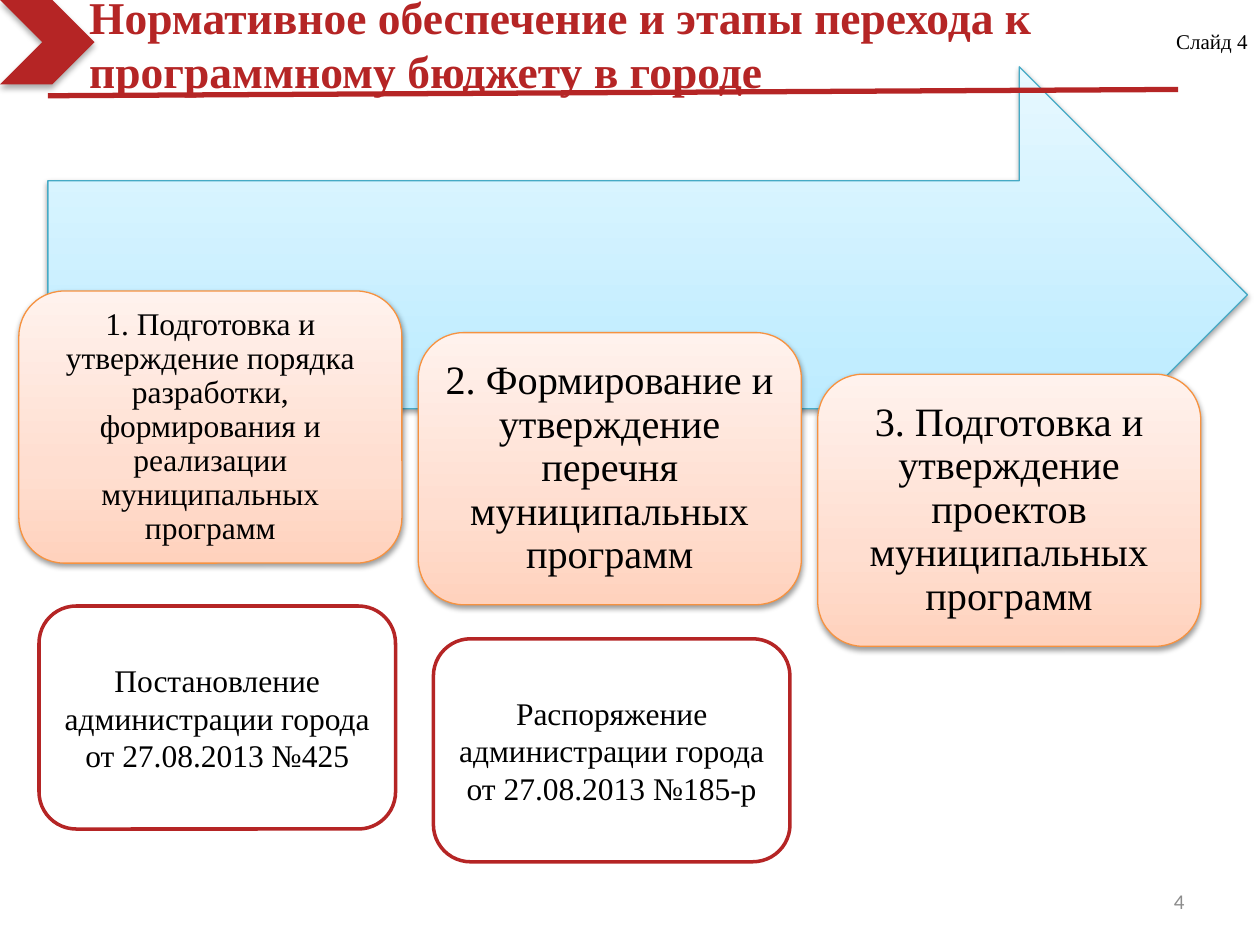
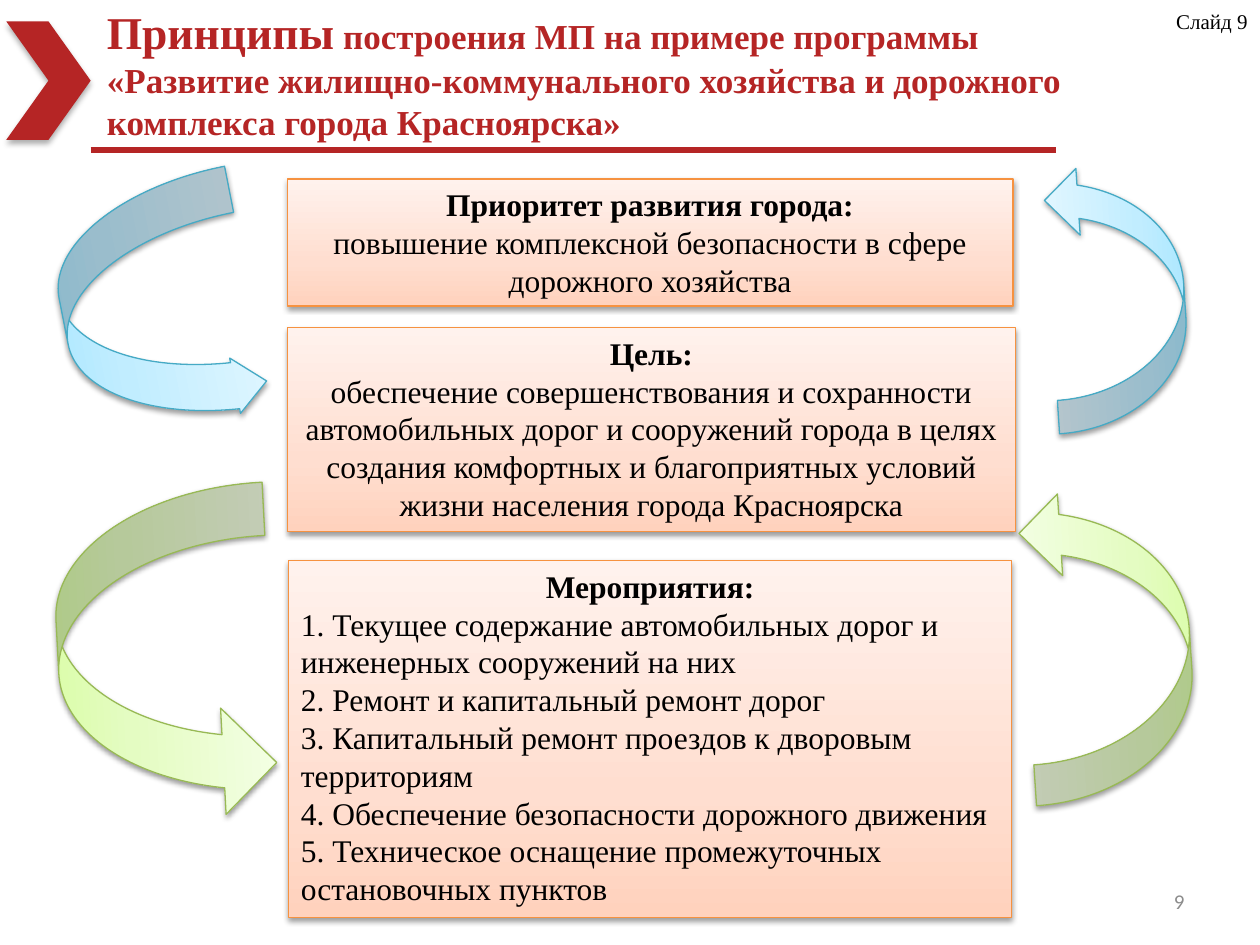
from copy import deepcopy

from pptx import Presentation
from pptx.dml.color import RGBColor
from pptx.enum.shapes import MSO_CONNECTOR as CONN, MSO_SHAPE as SHAPE
from pptx.enum.text import MSO_ANCHOR as ANCHOR, PP_ALIGN as ALIGN
from pptx.oxml.ns import qn
from pptx.util import Inches, Pt
from lxml.etree import SubElement

# Shared style
FONT = "Times New Roman"
RED, BLACK, GREY, WHITE = "B52525", "000000", "8C8C8C", "FFFFFF"
STOPS = (0, 0.35, 1)
BLUE = (("A7E6FF", "C1EDFF", "E7F8FF"), "46AAC5")
GREEN = (("DAFDA7", "E4FCC2", "F5FFE7"), "98B955")
PEACH = (("FFD2BD", "FFDED0", "FFF2ED"), "F69240")
SOFT_SHADOW = (3.15, 1.57, 38)
DEEP_SHADOW = (3.5, 2.2, 32)


def rgb(code):
    return RGBColor.from_string(code)


def inches(box):
    return [Inches(v) for v in box]


def add_shadow(sp, blur, dist, alpha):
    """Put a soft black shadow below the shape."""
    sp.shadow.inherit = False
    effects = sp._element.spPr.find(qn("a:effectLst"))
    shadow = SubElement(effects, qn("a:outerShdw"), blurRad=str(Pt(blur)),
                        dist=str(Pt(dist)), dir="5400000", rotWithShape="0")
    color = SubElement(shadow, qn("a:srgbClr"), val=BLACK)
    SubElement(color, qn("a:alpha"), val=str(alpha * 1000))


def add_gradient_shape(slide, kind, box, theme, rotation=0):
    """Add a shape with a three-stop gradient rising from its bottom edge."""
    colors, line = theme
    sp = slide.shapes.add_shape(kind, *inches(box))
    sp.rotation = rotation
    sp.fill.gradient()
    sp.fill.gradient_angle = 90
    stop_list = next(sp._element.spPr.iter(qn("a:gsLst")))
    stop_list.append(deepcopy(stop_list[0]))
    for stop, position, color in zip(sp.fill.gradient_stops, STOPS, colors):
        stop.position = position
        stop.color.rgb = rgb(color)
    sp.line.color.rgb = rgb(line)
    sp.line.width = Pt(0.75)
    add_shadow(sp, *SOFT_SHADOW)
    return sp


def style(p, size, color=BLACK, bold=False, align=ALIGN.LEFT, font=FONT):
    p.alignment = align
    p.font.name, p.font.size, p.font.bold = font, Pt(size), bold
    p.font.color.rgb = rgb(color)


def set_text(sp, text, size, anchor=ANCHOR.MIDDLE, **look):
    """Fill a shape with one styled paragraph."""
    tf = sp.text_frame
    tf.word_wrap = True
    tf.vertical_anchor = anchor
    p = tf.paragraphs[0]
    p.text = text
    style(p, size, **look)
    return tf


def add_label(slide, box, text, size, **look):
    return set_text(slide.shapes.add_textbox(*inches(box)), text, size, **look)


# Header and footer used by both slides
def add_header(slide, title, title_box, chevron_box, rule, label_top, number):
    tf = add_label(slide, title_box, title, 26, color=RED, bold=True)
    line = slide.shapes.add_connector(CONN.STRAIGHT, *inches(rule))
    line.line.color.rgb = rgb(RED)
    line.line.width = Pt(3)
    SubElement(line._element.spPr, qn("a:effectLst"))
    chevron = slide.shapes.add_shape(SHAPE.CHEVRON, *inches(chevron_box))
    chevron.fill.solid()
    chevron.fill.fore_color.rgb = rgb(RED)
    chevron.line.fill.background()
    add_shadow(chevron, *DEEP_SHADOW)
    add_label(slide, (9.02, label_top, 0.98, 0.3), f"Слайд {number}", 12,
              anchor=ANCHOR.TOP, align=ALIGN.RIGHT)
    return tf


def add_page_number(slide, number):
    add_label(slide, (7.17, 6.95, 2.33, 0.4), str(number), 12,
              color=GREY, align=ALIGN.RIGHT, font="Calibri")


# Slide 4: stages of the transition
def add_stages(slide, left, top):
    stages = (
        ("1. Подготовка и утверждение порядка разработки, формирования "
         "и реализации муниципальных программ", 18),
        ("2. Формирование и утверждение перечня муниципальных программ", 23),
        ("3. Подготовка и утверждение проектов муниципальных программ", 23),
    )
    for i, (text, size) in enumerate(stages):
        box = (left + 3.17 * i, top + 0.33 * i, 3.04, 2.16)
        sp = add_gradient_shape(slide, SHAPE.ROUNDED_RECTANGLE, box, PEACH)
        tf = set_text(sp, text, size, align=ALIGN.CENTER)
        tf.paragraphs[0].line_spacing = 0.9


def add_order(slide, left, top, text):
    sp = slide.shapes.add_shape(SHAPE.ROUNDED_RECTANGLE,
                                *inches((left, top, 2.83, 1.77)))
    sp.shadow.inherit = False
    sp.fill.solid()
    sp.fill.fore_color.rgb = rgb(WHITE)
    sp.line.color.rgb = rgb(RED)
    sp.line.width = Pt(2)
    set_text(sp, text, 18, align=ALIGN.CENTER)


def build_stages_slide(slide):
    add_gradient_shape(slide, SHAPE.RIGHT_ARROW, (0.38, 0.53, 9.52, 3.62), BLUE)
    add_stages(slide, 0.15, 2.31)
    add_page_number(slide, 4)
    add_order(slide, 0.31, 4.81,
              "Постановление администрации города от 27.08.2013 №425")
    add_order(slide, 3.44, 5.07,
              "Распоряжение администрации города от 27.08.2013 №185-р")
    add_header(slide,
               "Нормативное обеспечение и этапы перехода к программному "
               "бюджету в городе",
               title_box=(0.61, 0.02, 9, 0.65), chevron_box=(0, 0, 0.75, 0.67),
               rule=(0.38, 0.76, 9.35, 0.71), label_top=0.18, number=4)


# Slide 9: principles of a municipal programme
def add_principle(slide, box, heading, lines, align):
    sp = add_gradient_shape(slide, SHAPE.RECTANGLE, box, PEACH)
    tf = set_text(sp, heading, 18, anchor=ANCHOR.TOP, bold=True,
                  align=ALIGN.CENTER)
    for text in lines:
        p = tf.add_paragraph()
        p.text = text
        style(p, 18, align=align)


def add_loop_arrows(slide):
    arrows = (
        ((7.55, 4.46, 2.49, 1.3), 266.3, GREEN, (0.25, 0.5, 0.25)),
        ((0.26, 1.68, 1.96, 1.49), 78.9, BLUE, (0.25, 0.3, 0.17)),
        ((-0.02, 4.35, 2.65, 1.69), 87, GREEN, (0.25, 0.5, 0.25)),
        ((7.81, 1.82, 2.12, 1.06), 266.3, BLUE, (0.25, 0.5, 0.25)),
    )
    for box, rotation, theme, adjustments in arrows:
        sp = add_gradient_shape(slide, SHAPE.CURVED_UP_ARROW, box, theme, rotation)
        for i, value in enumerate(adjustments):
            sp.adjustments[i] = value


def build_principles_slide(slide):
    add_page_number(slide, 9)
    add_principle(
        slide, (2.28, 1.42, 5.76, 1.01), "Приоритет развития города:",
        ["повышение комплексной безопасности в сфере дорожного хозяйства"],
        ALIGN.CENTER)
    add_principle(
        slide, (2.28, 2.6, 5.78, 1.62), "Цель:",
        ["обеспечение совершенствования и сохранности автомобильных дорог "
         "и сооружений города в целях создания комфортных и благоприятных "
         "условий жизни населения города Красноярска"],
        ALIGN.CENTER)
    add_principle(
        slide, (2.29, 4.45, 5.74, 2.83), "Мероприятия:",
        ["1. Текущее содержание автомобильных дорог и инженерных сооружений на них",
         "2. Ремонт и капитальный ремонт дорог",
         "3. Капитальный ремонт проездов к дворовым территориям",
         "4. Обеспечение безопасности дорожного движения",
         "5. Техническое оснащение промежуточных остановочных пунктов"],
        ALIGN.LEFT)
    add_loop_arrows(slide)
    tf = add_header(slide, "Принципы",
                    title_box=(0.75, 0.48, 8.27, 0.52),
                    chevron_box=(0.05, 0.17, 0.67, 0.94),
                    rule=(0.72, 1.19, 8.38, 1.19), label_top=0.02, number=9)
    # Smaller continuation of the title, raised above the rule
    tf.margin_bottom = Inches(0.36)
    r = tf.paragraphs[0].add_run()
    r.text = (" построения МП на примере программы «Развитие "
              "жилищно-коммунального хозяйства и дорожного комплекса "
              "города Красноярска»")
    r.font.size = Pt(20)


def main():
    prs = Presentation()
    prs.slide_width, prs.slide_height = Inches(10), Inches(7.5)
    for build in (build_stages_slide, build_principles_slide):
        build(prs.slides.add_slide(prs.slide_layouts[6]))
    prs.save("out.pptx")


if __name__ == "__main__":
    main()
